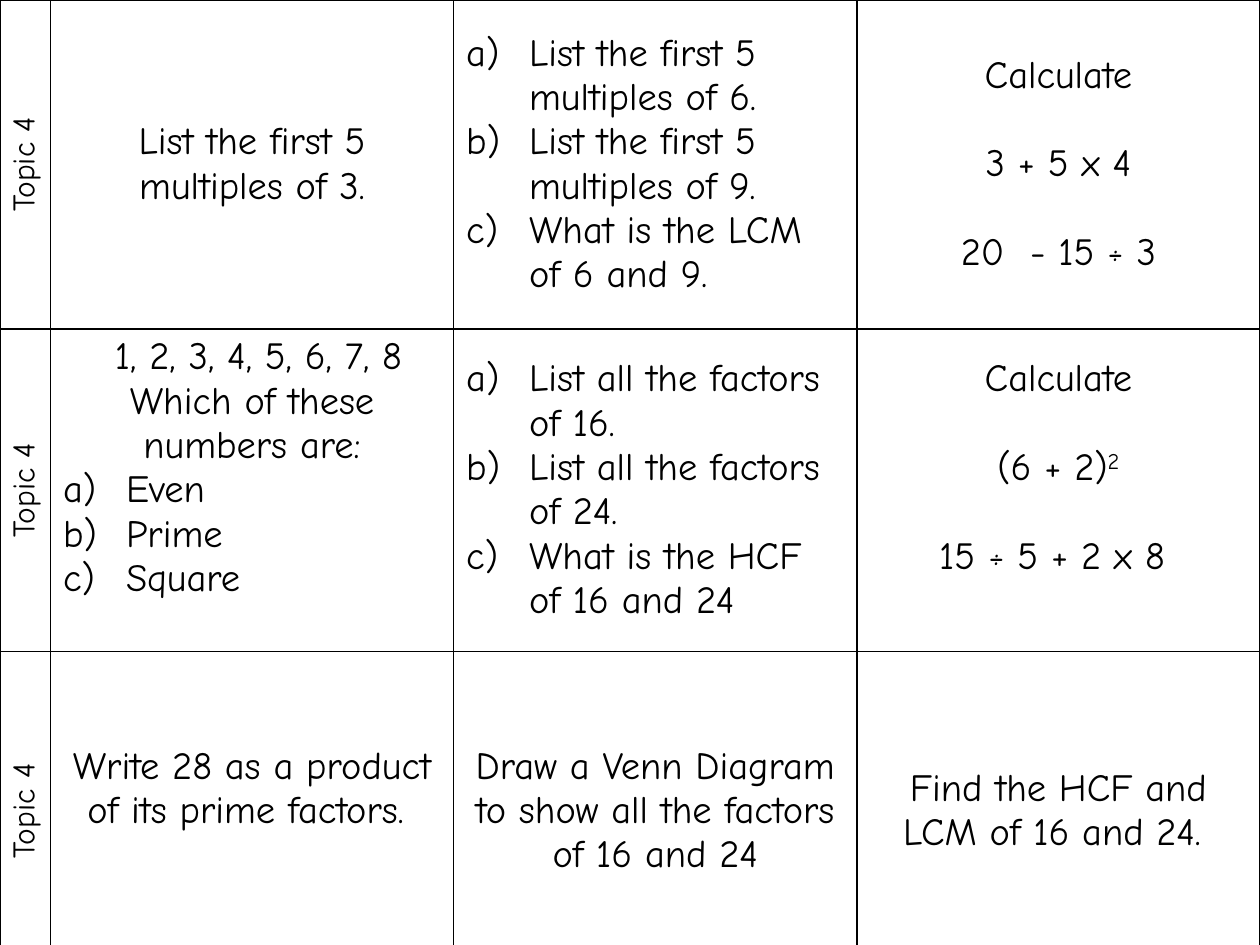
from dataclasses import dataclass

from lxml.etree import SubElement
from pptx import Presentation
from pptx.dml.color import RGBColor
from pptx.enum.text import MSO_ANCHOR, PP_ALIGN
from pptx.oxml.ns import qn
from pptx.util import Inches, Pt


@dataclass(frozen=True)
class Theme:
    font: str = "Comic Neue"
    ink: str = "000000"
    label_size: float = 18
    question_size: float = 22
    line_gap: float = 25.4
    border_width: float = 1


@dataclass(frozen=True)
class Question:
    lines: tuple = ()
    items: tuple = ()
    spaced: bool = False
    raised: bool = False


THEME = Theme()
TOPIC = "Topic 4"
COLUMN_WIDTHS = (0.4, 3.2, 3.2, 3.2)
ROW_HEIGHTS = (2.61, 2.56, 2.53)
LIST_INDENT = Inches(0.5)
RAISED_MARGIN = Inches(0.4)

QUESTIONS = (
    (
        Question(lines=("List the first 5 multiples of 3.",)),
        Question(items=(
            "List the first 5 multiples of 6.",
            "List the first 5 multiples of 9.",
            "What is the LCM of 6 and 9.",
        )),
        Question(lines=("Calculate", "3 + 5 x 4", "20  - 15 ÷ 3"), spaced=True),
    ),
    (
        Question(
            lines=(" 1, 2, 3, 4, 5, 6, 7, 8", "Which of these numbers are:"),
            items=("Even", "Prime", "Square"),
            raised=True,
        ),
        Question(items=(
            "List all the factors of 16.",
            "List all the factors of 24.",
            "What is the HCF of 16 and 24",
        )),
        Question(
            lines=("Calculate", "(6 + 2)^2", "15 ÷ 5 + 2 x 8 "),
            spaced=True,
            raised=True,
        ),
    ),
    (
        Question(lines=("Write 28 as a product of its prime factors. ",), raised=True),
        Question(lines=("Draw a Venn Diagram to show all the factors of 16 and 24",)),
        Question(lines=("Find the HCF and LCM of 16 and 24. ",)),
    ),
)


def apply_format(target, values):
    for name, value in values.items():
        setattr(target, name, value)


def add_run(paragraph, text, size, superscript=False):
    run = paragraph.add_run()
    run.text = text
    apply_format(run.font, {"name": THEME.font, "size": Pt(size), "bold": False})
    run.font.color.rgb = RGBColor.from_string(THEME.ink)
    if superscript:
        run.font._element.set("baseline", "30000")


def write_line(paragraph, text, size):
    paragraph.alignment = PP_ALIGN.CENTER
    base, _, power = text.partition("^")
    add_run(paragraph, base, size)
    if power:
        add_run(paragraph, power, size, superscript=True)


def write_item(paragraph, text):
    paragraph.alignment = PP_ALIGN.LEFT
    properties = paragraph._p.get_or_add_pPr()
    properties.set("marL", str(LIST_INDENT))
    properties.set("indent", str(-LIST_INDENT))
    SubElement(properties, qn("a:buFont"), typeface=THEME.font)
    SubElement(properties, qn("a:buAutoNum"), type="alphaLcParenR")
    add_run(paragraph, text, THEME.question_size)


def style_cell(cell):
    properties = cell._tc.get_or_add_tcPr()
    for side in ("lnL", "lnR", "lnT", "lnB"):
        line = SubElement(properties, qn(f"a:{side}"), w=str(Pt(THEME.border_width)))
        fill = SubElement(line, qn("a:solidFill"))
        SubElement(fill, qn("a:srgbClr"), val=THEME.ink)
    cell.fill.background()


def fill_label(cell):
    style_cell(cell)
    cell._tc.get_or_add_tcPr().set("vert", "vert270")
    write_line(cell.text_frame.paragraphs[0], TOPIC, THEME.label_size)


def fill_question(cell, question):
    style_cell(cell)
    cell.vertical_anchor = MSO_ANCHOR.MIDDLE
    if question.raised:
        cell.margin_bottom = RAISED_MARGIN
    frame = cell.text_frame
    texts = question.lines + question.items
    for index, text in enumerate(texts):
        paragraph = frame.add_paragraph() if index else frame.paragraphs[0]
        if index < len(question.lines):
            write_line(paragraph, text, THEME.question_size)
        else:
            write_item(paragraph, text)
        if question.spaced and index:
            paragraph.space_before = Pt(THEME.line_gap)


def add_question_table(slide):
    table = slide.shapes.add_table(
        len(ROW_HEIGHTS), len(COLUMN_WIDTHS), Inches(0), Inches(0),
        Inches(sum(COLUMN_WIDTHS)), Inches(sum(ROW_HEIGHTS)),
    ).table
    apply_format(table, {"first_row": False, "horz_banding": False})
    for column, width in zip(table.columns, COLUMN_WIDTHS):
        column.width = Inches(width)
    for row, height, questions in zip(table.rows, ROW_HEIGHTS, QUESTIONS):
        row.height = Inches(height)
        label, *cells = row.cells
        fill_label(label)
        for cell, question in zip(cells, questions):
            fill_question(cell, question)


def main():
    presentation = Presentation()
    apply_format(presentation, {"slide_width": Inches(10), "slide_height": Inches(7.5)})
    slide = presentation.slides.add_slide(presentation.slide_layouts[6])
    add_question_table(slide)
    presentation.save("out.pptx")


if __name__ == "__main__":
    main()
